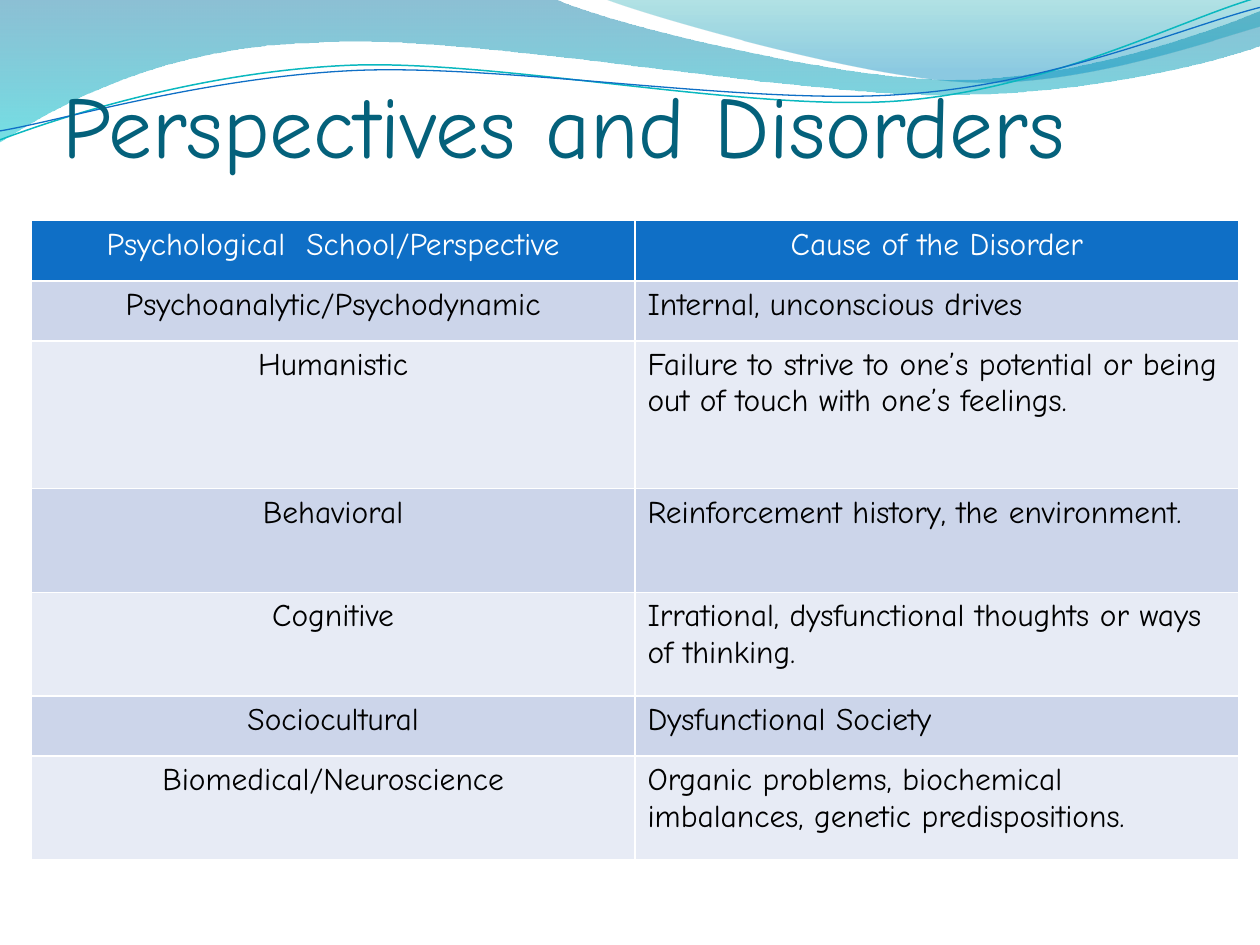
from lxml import etree
from pptx import Presentation
from pptx.dml.color import RGBColor
from pptx.enum.text import MSO_ANCHOR, PP_ALIGN
from pptx.oxml.ns import qn
from pptx.util import Cm, Pt

CENTER, LEFT = PP_ALIGN.CENTER, PP_ALIGN.LEFT
BOTTOM = MSO_ANCHOR.BOTTOM

WHITE = RGBColor(0xFF, 0xFF, 0xFF)
BLACK = RGBColor(0x00, 0x00, 0x00)
TITLE_TEAL = RGBColor(0x04, 0x61, 0x7B)
HEADER_BLUE = RGBColor(0x0F, 0x6F, 0xC6)
LINE_TEAL = RGBColor(0x0A, 0xB8, 0xBF)
BANDS = (RGBColor(0xCC, 0xD5, 0xEA), RGBColor(0xE7, 0xEB, 0xF5))
# Gradient stops: position, colour, opacity in percent
WIDE_STOPS = ((0, RGBColor(0x00, 0x74, 0xA1), 45), (1, RGBColor(0x00, 0xC6, 0xCF), 55))
RIGHT_STOPS = ((0, RGBColor(0x00, 0xA1, 0xA9), 30), (0.8, RGBColor(0x00, 0x8B, 0xBF), 45))

FONT = "Comic Neue"
LINE_TILT = -2.7

# Outlines in cm: a pair is a straight step, six numbers are a Bezier curve
WIDE_WAVE = [
    (0, 0), (11.18, -0.02),
    (12.09, 0.43, 16.87, 1.6, 19.25, 1.6),
    (21.67, 1.6, 24.33, 0.66, 25.4, 0.23),
    (25.43, 0.91),
    (24.97, 1.12, 22.1, 1.93, 18.95, 1.91),
    (15.8, 1.91, 9.7, 0.71, 6.53, 0.86),
    (3.28, 0.91, 1.17, 2.11, -0.03, 2.87),
]
RIGHT_WAVE = [
    (12.17, -0.03),
    (12.93, 0.28, 17.32, 1.57, 19.53, 1.65),
    (21.74, 1.75, 24.41, 0.81, 25.4, 0.53),
    (25.4, 0),
]
# The two lines are given before they are tilted
TEAL_LINE = [
    (-0.05, 2.22),
    (1.19, 1.82, 4.02, 1.04, 7.05, 1.05),
    (10.05, 1.07, 15.02, 2.37, 18.08, 2.29),
    (21.13, 2.2, 23.86, 0.91, 25.41, 0.55),
]
BLUE_LINE = [
    (-0.04, 2.04),
    (1.16, 1.9, 4.17, 1.15, 7.2, 1.16),
    (10.25, 1.18, 15.13, 2.25, 18.19, 2.16),
    (21.22, 2.1, 23.93, 1.06, 25.45, 0.75),
]

# Row height in cm, perspective, cause
ROWS = [
    (1.21, "Psychological  School/Perspective", "Cause of the Disorder"),
    (1.21, "Psychoanalytic/Psychodynamic", "Internal, unconscious drives"),
    (2.98, "Humanistic",
     "Failure to strive to one’s potential or being out of touch with one’s feelings."),
    (2.09, "Behavioral", "Reinforcement history, the environment."),
    (2.09, "Cognitive", "Irrational, dysfunctional thoughts or ways of thinking."),
    (1.21, "Sociocultural", "Dysfunctional Society"),
    (2.09, "Biomedical/Neuroscience",
     "Organic problems, biochemical imbalances, genetic predispositions."),
]


def write_text(tf, text, size=18, color=BLACK, align=LEFT):
    p = tf.paragraphs[0]
    p.alignment = align
    r = p.add_run()
    r.text = text
    r.font.name = FONT
    r.font.size = Pt(size)
    r.font.color.rgb = color


def add_outline(slide, outline, close):
    """Build the outline from its points, then turn triples of steps into curves."""
    points = [(Cm(step[i]), Cm(step[i + 1]))
              for step in outline for i in range(0, len(step), 2)]
    builder = slide.shapes.build_freeform(*points[0])
    builder.add_line_segments(points[1:], close=close)
    sp = builder.convert_to_shape()
    sp.shadow.inherit = False
    segments = iter(list(sp._element.iter(qn("a:lnTo"))))
    for step in outline[1:]:
        first = next(segments)
        if len(step) == 6:
            first.tag = qn("a:cubicBezTo")
            for _ in range(2):
                extra = next(segments)
                first.append(extra[0])
                extra.getparent().remove(extra)
    return sp


def add_wave(slide, outline, stops):
    sp = add_outline(slide, outline, close=True)
    sp.line.fill.background()
    sp.fill.gradient()
    sp.fill.gradient_angle = 270
    for stop, (position, color, _) in zip(sp.fill.gradient_stops, stops):
        stop.position = position
        stop.color.rgb = color
    colors = sp._element.spPr.iter(qn("a:srgbClr"))
    for clr, (_, _, opacity) in zip(list(colors), stops):
        etree.SubElement(clr, qn("a:alpha"), val=str(opacity * 1000))


def add_curve(slide, outline, color, width):
    sp = add_outline(slide, outline, close=False)
    sp.rotation = LINE_TILT
    sp.fill.background()
    sp.line.color.rgb = color
    sp.line.width = Pt(width)


def add_title(slide, text):
    tf = slide.shapes.add_textbox(Cm(1.27), Cm(0.37), Cm(22.86), Cm(3.18)).text_frame
    tf.word_wrap = True
    tf.vertical_anchor = BOTTOM
    tf.margin_left = tf.margin_right = tf.margin_bottom = 0
    write_text(tf, text, size=50, color=TITLE_TEAL)


def set_borders(cell):
    tcPr = cell._tc.get_or_add_tcPr()
    for side in "LRTB":
        ln = etree.SubElement(tcPr, qn(f"a:ln{side}"), w=str(Pt(1)))
        fill = etree.SubElement(ln, qn("a:solidFill"))
        etree.SubElement(fill, qn("a:srgbClr"), val=str(WHITE))


def add_perspectives_table(slide):
    height = sum(row[0] for row in ROWS)
    table = slide.shapes.add_table(
        len(ROWS), 2, Cm(0.63), Cm(4.45), Cm(24.34), Cm(height)).table
    for i, (row_height, *texts) in enumerate(ROWS):
        header = i == 0
        table.rows[i].height = Cm(row_height)
        for j, text in enumerate(texts):
            cell = table.cell(i, j)
            set_borders(cell)
            cell.fill.solid()
            cell.fill.fore_color.rgb = HEADER_BLUE if header else BANDS[(i - 1) % 2]
            write_text(cell.text_frame, text, color=WHITE if header else BLACK,
                       align=CENTER if header or j == 0 else LEFT)


def main():
    prs = Presentation()
    prs.slide_width, prs.slide_height = Cm(25.4), Cm(19.05)
    slide = prs.slides.add_slide(prs.slide_layouts[6])
    add_wave(slide, WIDE_WAVE, WIDE_STOPS)
    add_wave(slide, RIGHT_WAVE, RIGHT_STOPS)
    add_curve(slide, TEAL_LINE, LINE_TEAL, 0.85)
    add_curve(slide, BLUE_LINE, HEADER_BLUE, 0.75)
    add_title(slide, "Perspectives and Disorders")
    add_perspectives_table(slide)
    prs.save("out.pptx")


if __name__ == "__main__":
    main()
